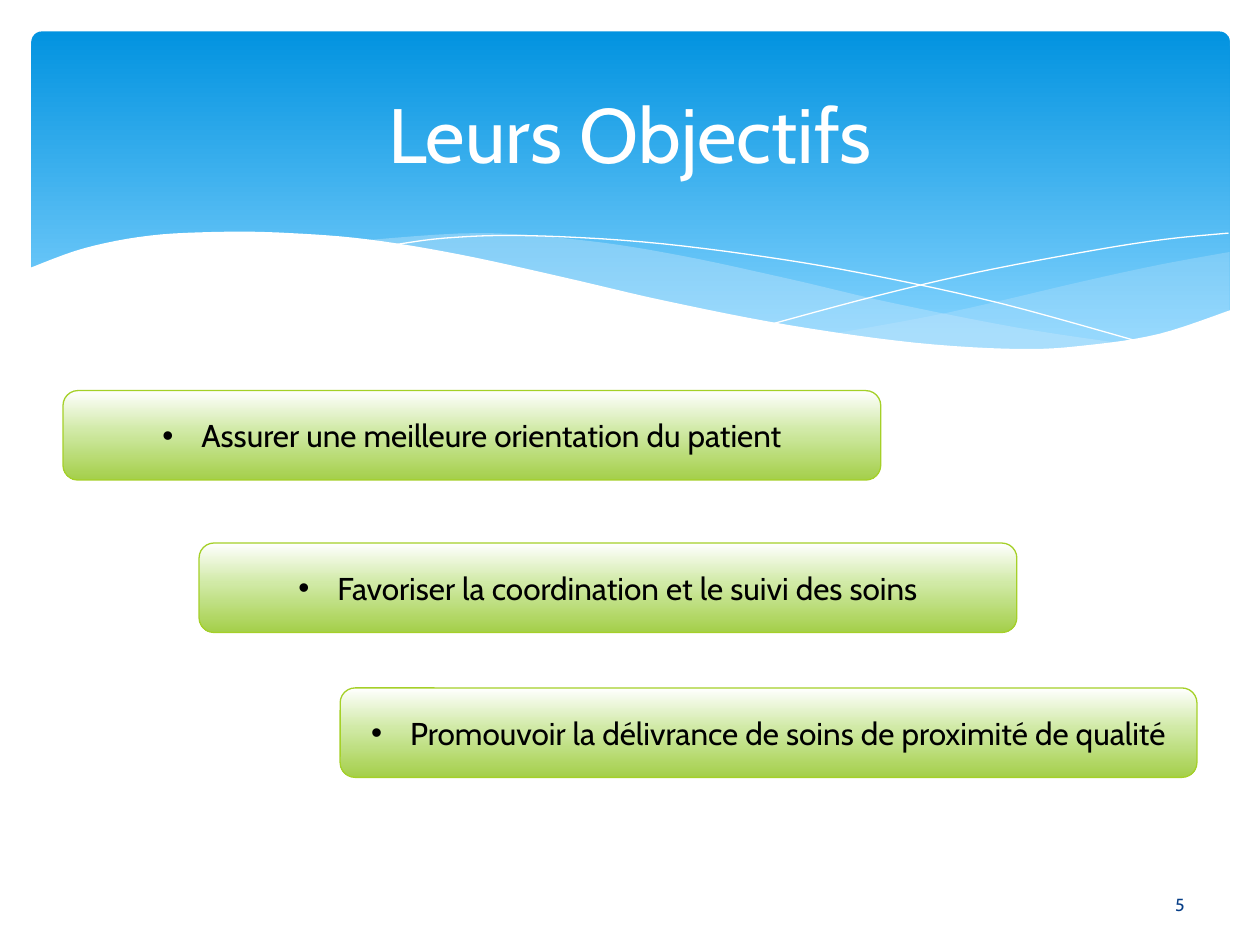
"""Build the objectives slide: a wavy blue header above three staggered green boxes."""
from lxml.etree import SubElement
from pptx import Presentation
from pptx.dml.color import RGBColor
from pptx.enum.shapes import MSO_SHAPE
from pptx.enum.text import MSO_ANCHOR, PP_ALIGN
from pptx.oxml.ns import qn
from pptx.util import Inches, Pt

WHITE = RGBColor(0xFF, 0xFF, 0xFF)
BLACK = RGBColor(0, 0, 0)
NAVY = RGBColor(0x07, 0x3E, 0x87)
PALE_BLUE = RGBColor(0xC6, 0xE7, 0xFC)
GREEN_EDGE = RGBColor(0xA5, 0xD0, 0x28)
BLUE_STOPS = [(0, RGBColor(0x02, 0x93, 0xE0)), (90, RGBColor(0x83, 0xD3, 0xFE))]
GREEN_STOPS = [(0, WHITE), (44, RGBColor(0xD1, 0xEA, 0xA7)), (100, RGBColor(0xA4, 0xCF, 0x4A))]
FONT = "Cabin"
WIDTH, HEIGHT = 10, 7.5

TITLE = "Leurs Objectifs"
PAGE_NUMBER = "5"
OBJECTIVES = [
    ("Assurer une meilleure orientation du patient", 0.5, 3.1, 6.49),
    ("Favoriser la coordination et le suivi des soins", 1.58, 4.31, 6.49),
    ("Promouvoir la délivrance de soins de proximité de qualité", 2.7, 5.46, 6.8),
]
HEADER_AREA = (0.25, 0.25, 9.51, 2.7)
TITLE_AREA = (0.5, 0.37, 9, 1.37)
NUMBER_AREA = (8.73, 6.98, 1.27, 0.4)
BOX_HEIGHT = 0.71
BULLET_INDENT = Inches(0.31)

RIGHT_CREST = [(9.76, 2), (9.21, 2.1), (8.61, 2.23), (7.53, 2.48), (6.61, 2.65)]
RIGHT_TROUGH = [
    (6.61, 2.65), (7.19, 2.72), (7.81, 2.77), (8.35, 2.77),
    (8.81, 2.73), (9.28, 2.63), (9.76, 2.47),
]
MIDDLE_CREST = [
    (8.93, 2.73), (8.07, 2.6), (7.06, 2.4), (6.29, 2.22),
    (5.41, 2.03), (4.65, 1.91), (3.8, 1.85), (2.86, 1.91),
]
MIDDLE_TROUGH = [
    (2.86, 1.91), (3.62, 2.03), (4.49, 2.22), (5.3, 2.4),
    (6.18, 2.58), (7.09, 2.72), (7.96, 2.78), (8.93, 2.73),
]
FALLING_LINE = [
    (3.09, 1.95), (3.53, 1.89), (4.16, 1.87), (5.1, 1.92),
    (6.08, 2.04), (6.95, 2.19), (7.95, 2.41), (9.07, 2.72),
]
RISING_LINE = [(6.13, 2.57), (6.95, 2.35), (7.76, 2.16), (8.66, 1.99), (9.24, 1.9), (9.75, 1.85)]
WHITE_CREST = [
    (9.77, 2.46), (9.2, 2.65), (8.63, 2.74), (8.09, 2.77), (7.26, 2.72),
    (6.26, 2.58), (5.29, 2.39), (4.47, 2.2), (3.65, 2.02), (2.92, 1.9),
    (2.3, 1.85), (1.77, 1.84), (1.19, 1.87), (0.67, 1.97), (0.23, 2.13),
]
WHITE_FLOOR = [(0.23, 3.29), (9.77, 3.29)]

PALE_WAVES = [([RIGHT_CREST, RIGHT_TROUGH], 29), ([MIDDLE_CREST, MIDDLE_TROUGH], 40)]
THIN_LINES = [FALLING_LINE, RISING_LINE]
STEPS_PER_KNOT = 6


def spline_value(before, start, end, after, share):
    """Return one coordinate of a Catmull-Rom curve between start and end."""
    linear = (end - before) * share
    square = (2 * before - 5 * start + 4 * end - after) * share ** 2
    cube = (3 * start - before - 3 * end + after) * share ** 3
    return start + (linear + square + cube) / 2


def smooth(knots):
    """Return points along a soft curve through all knots."""
    padded = [knots[0], *knots, knots[-1]]
    points = []
    for neighbours in zip(padded, padded[1:], padded[2:], padded[3:]):
        for step in range(STEPS_PER_KNOT):
            share = step / STEPS_PER_KNOT
            points.append(tuple(spline_value(*axis, share) for axis in zip(*neighbours)))
    return points + [knots[-1]]


def add_outline(page, edges, closed):
    """Join the smoothed edges into one freeform."""
    points = [(Inches(x), Inches(y)) for edge in edges for x, y in smooth(edge)]
    builder = page.shapes.build_freeform(*points[0])
    builder.add_line_segments(points[1:], close=closed)
    outline = builder.convert_to_shape()
    outline.shadow.inherit = False
    return outline


def add_wave(page, edges, color, opacity=100):
    """Fill the area between the edges."""
    wave = add_outline(page, edges, True)
    wave.fill.solid()
    wave.fill.fore_color.rgb = color
    wave.line.fill.background()
    color_node = wave._element.spPr.find(qn("a:solidFill"))[0]
    SubElement(color_node, qn("a:alpha"), val=str(opacity * 1000))


def add_thin_line(page, knots):
    """Draw a white hairline through the knots."""
    curve = add_outline(page, [knots], False)
    curve.fill.background()
    curve.line.color.rgb = WHITE
    curve.line.width = Pt(0)


def set_gradient(shape, stops):
    """Fill the shape from top to bottom with the given stops."""
    shape.fill.gradient()
    shape.fill.gradient_angle = 270
    stop_list = shape._element.spPr.find(qn("a:gradFill")).find(qn("a:gsLst"))
    for old_stop in list(stop_list):
        stop_list.remove(old_stop)
    for position, color in stops:
        stop = SubElement(stop_list, qn("a:gs"), pos=str(position * 1000))
        SubElement(stop, qn("a:srgbClr"), val=str(color))


def add_rounded_box(page, area, stops):
    """Add a rounded box with a gradient and no edge."""
    box = page.shapes.add_shape(MSO_SHAPE.ROUNDED_RECTANGLE, *map(Inches, area))
    box.shadow.inherit = False
    set_gradient(box, stops)
    box.line.fill.background()
    return box


def write_text(box, text, size, color):
    """Write one centred line and return its paragraph."""
    frame = box.text_frame
    frame.word_wrap = True
    frame.vertical_anchor = MSO_ANCHOR.MIDDLE
    para = frame.paragraphs[0]
    para.alignment = PP_ALIGN.CENTER
    span = para.add_run()
    span.text = text
    span.font.name = FONT
    span.font.size = Pt(size)
    span.font.color.rgb = color
    return para


def add_label(page, area, text, size, color):
    """Add a text box holding one line."""
    box = page.shapes.add_textbox(*map(Inches, area))
    write_text(box, text, size, color)


def add_objective(page, text, left, top, width):
    """Add a green box with one bulleted objective."""
    box = add_rounded_box(page, (left, top, width, BOX_HEIGHT), GREEN_STOPS)
    box.line.color.rgb = GREEN_EDGE
    box.line.width = Pt(0.75)
    properties = write_text(box, text, 18, BLACK)._p.get_or_add_pPr()
    properties.set("marL", str(BULLET_INDENT))
    properties.set("indent", str(-BULLET_INDENT))
    SubElement(properties, qn("a:buFont"), typeface="Arial")
    SubElement(properties, qn("a:buChar"), char="•")


def main():
    """Assemble the slide from back to front."""
    deck = Presentation()
    deck.slide_width, deck.slide_height = Inches(WIDTH), Inches(HEIGHT)
    page = deck.slides.add_slide(deck.slide_layouts[6])
    header = add_rounded_box(page, HEADER_AREA, BLUE_STOPS)
    header.adjustments[0] = 0.03
    for edges, opacity in PALE_WAVES:
        add_wave(page, edges, PALE_BLUE, opacity)
    for knots in THIN_LINES:
        add_thin_line(page, knots)
    add_wave(page, [WHITE_CREST, WHITE_FLOOR], WHITE)
    add_label(page, TITLE_AREA, TITLE, 44, WHITE)
    for objective in OBJECTIVES:
        add_objective(page, *objective)
    add_label(page, NUMBER_AREA, PAGE_NUMBER, 10, NAVY)
    deck.save("out.pptx")


if __name__ == "__main__":
    main()
